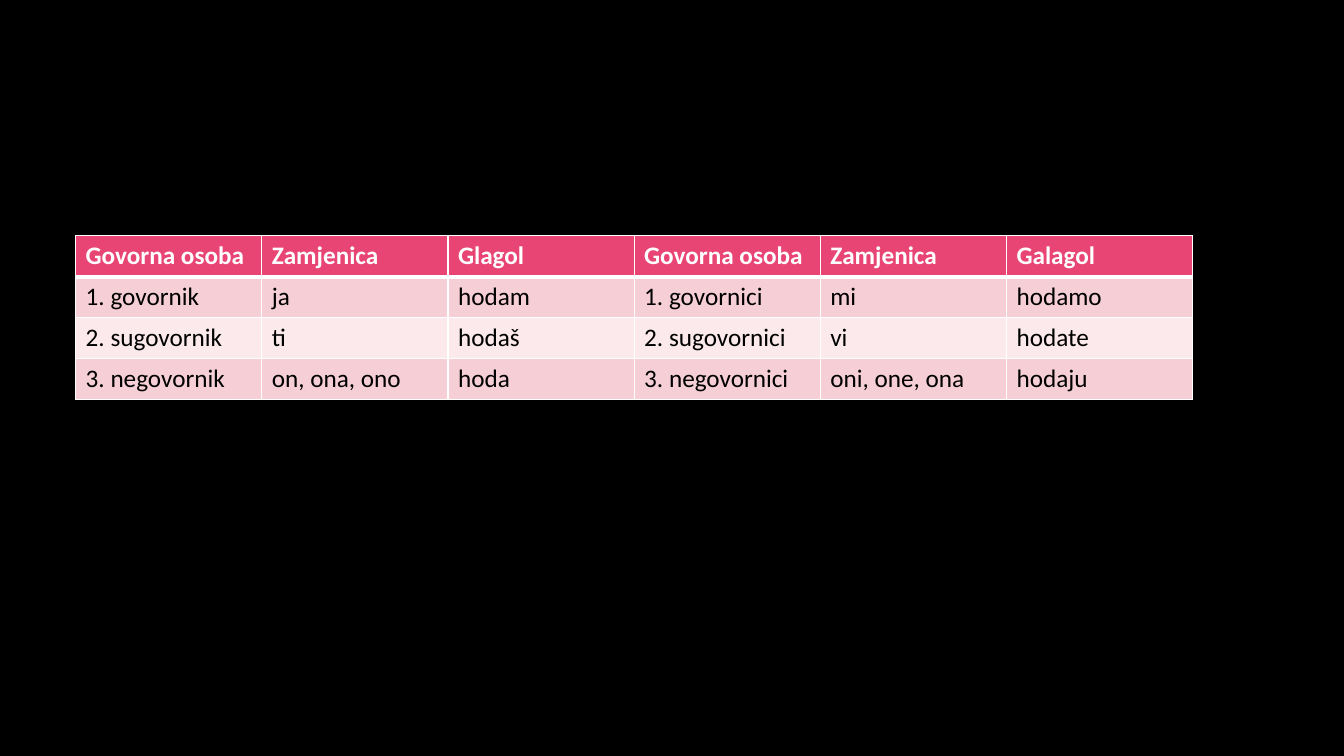
from dataclasses import dataclass

from lxml import etree
from pptx import Presentation, util as u
from pptx.dml.color import RGBColor
from pptx.oxml.ns import qn


@dataclass(frozen=True)
class Theme:
    back: str = "000000"
    head: str = "E84574"
    bands: tuple = ("F6CFD6", "FBE9EB")
    light: str = "FFFFFF"
    dark: str = "000000"
    font: str = "Calibri"
    size: int = 18
    thin: int = 1
    thick: int = 3


THEME = Theme()
WIDE, HIGH = u.Inches(13.33), u.Inches(7.5)
ROWS = (
    ("Govorna osoba", "Zamjenica", "Glagol", "Govorna osoba", "Zamjenica", "Galagol"),
    ("1. govornik", "ja", "hodam", "1. govornici", "mi", "hodamo"),
    ("2. sugovornik", "ti", "hodaš", "2. sugovornici", "vi", "hodate"),
    ("3. negovornik", "on, ona, ono", "hoda", "3. negovornici", "oni, one, ona", "hodaju"),
)


def paint(fill, color):
    fill.solid()
    fill.fore_color.rgb = RGBColor.from_string(color)


def edge(cell, side, width):
    props = cell._tc.get_or_add_tcPr()
    line = etree.SubElement(props, qn(f"a:ln{side}"), w=str(u.Pt(width)))
    fill = etree.SubElement(line, qn("a:solidFill"))
    etree.SubElement(fill, qn("a:srgbClr"), val=THEME.light)


def style(cell, row):
    head = row == 0
    widths = {"L": THEME.thin, "R": THEME.thin,
              "T": THEME.thick if row == 1 else THEME.thin,
              "B": THEME.thick if head else THEME.thin}
    for side, width in widths.items():
        edge(cell, side, width)
    paint(cell.fill, THEME.head if head else THEME.bands[(row - 1) % 2])
    font = cell.text_frame.paragraphs[0].font
    font.name, font.size, font.bold = THEME.font, u.Pt(THEME.size), head
    font.color.rgb = RGBColor.from_string(THEME.light if head else THEME.dark)


def verbs(slide, left, top, width, height):
    grid = slide.shapes.add_table(len(ROWS), len(ROWS[0]), left, top, width, height).table
    for col in grid.columns:
        col.width = width // len(ROWS[0])
    for row in grid.rows:
        row.height = height // len(ROWS)
    for r, words in enumerate(ROWS):
        for c, word in enumerate(words):
            cell = grid.cell(r, c)
            cell.text = word
            style(cell, r)


def main():
    deck = Presentation()
    deck.slide_width, deck.slide_height = WIDE, HIGH
    slide = deck.slides.add_slide(deck.slide_layouts[6])
    paint(slide.background.fill, THEME.back)
    verbs(slide, u.Inches(0.75), u.Inches(2.34), u.Inches(11.08), u.Inches(1.62))
    deck.save("out.pptx")


if __name__ == "__main__":
    main()
